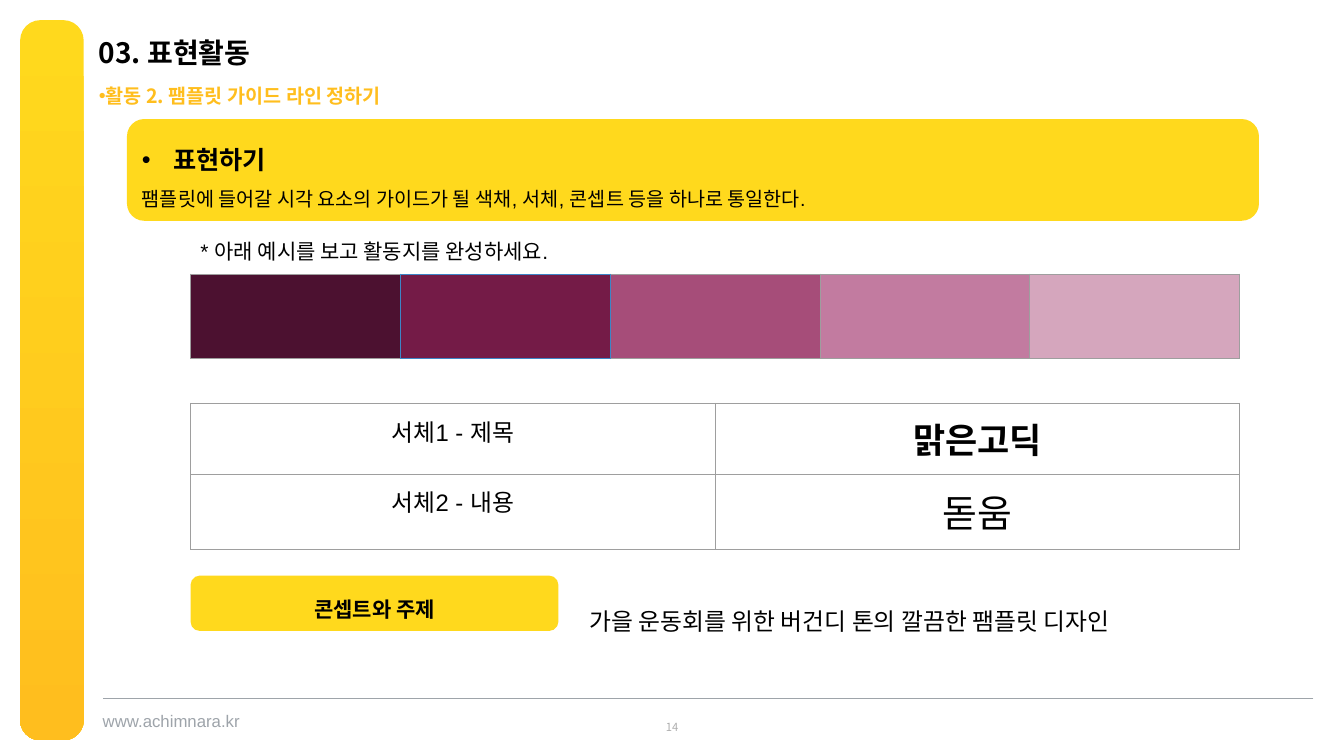
import pptx
import pptx.util
import pptx.dml.color
import pptx.enum.shapes
import pptx.enum.text
from lxml import etree

Pt = pptx.util.Pt
ALIGN = pptx.enum.text.PP_ALIGN
ANCHOR = pptx.enum.text.MSO_ANCHOR
ROUND = pptx.enum.shapes.MSO_SHAPE.ROUNDED_RECTANGLE
NS = "http://schemas.openxmlformats.org/drawingml/2006/main"

# Content
TITLE = "03. 표현활동"
STEP = "활동 2. 팸플릿 가이드 라인 정하기"
HEAD = "표현하기"
BODY = "팸플릿에 들어갈 시각 요소의 가이드가 될 색채, 서체, 콘셉트 등을 하나로 통일한다."
NOTE = "* 아래 예시를 보고 활동지를 완성하세요."
TONES = ["4C1130", "741B47", "A64D79", "C27BA0", "D5A6BD"]
PICKED = 1
FONTS = [("서체1 - 제목", "맑은고딕", 25, True),
         ("서체2 - 내용", "돋움", 27, False)]
LABEL = "콘셉트와 주제"
THEME = "가을 운동회를 위한 버건디 톤의 깔끔한 팸플릿 디자인"
SITE = "www.achimnara.kr"
PAGE = "14"

# Colours, fonts and type sizes
LOOK = dict(sun="FFD91D", amber="FFBE1E", ink="000000", grey="9EA4AA",
            pale="AEAEAE", grid="9E9E9E", blue="3D85C6",
            latin="Arial", hangul="Noto Sans CJK KR",
            title=20, head=18, cell=17, note=15, body=14, site=12, page=8)

# Layout, in points
LEFT, WIDE = 136.1, 749.6
TABLE_TOP, ROWS = 288, (50.6, 53.6)
PAD = (7.2, 3.6)


def rgb(code):
    return pptx.dml.color.RGBColor.from_string(code)


def node(parent, tag, **attrs):
    return etree.SubElement(parent, f"{{{NS}}}{tag}", attrs)


def write(para, text, size, color="ink", face="latin", bold=False,
          align=ALIGN.LEFT, space=None, bullet=None, hang=0):
    para.text = text
    para.alignment = align
    if space:
        para.line_spacing = space
    if bullet:
        props = para._p.get_or_add_pPr()
        props.set("marL", str(Pt(hang)))
        props.set("indent", str(-Pt(hang)))
        node(node(props, "buClr"), "srgbClr", val=LOOK[bullet])
        node(props, "buFont", typeface=LOOK["latin"])
        node(props, "buChar", char="•")
    font = para.font
    font.size, font.bold, font.name = Pt(size), bold, LOOK[face]
    font.color.rgb = rgb(LOOK[color])
    latin = para._p.find(f".//{{{NS}}}latin")
    latin.addnext(latin.makeelement(f"{{{NS}}}ea", typeface=LOOK["hangul"]))


def frame(shape, pad, anchor):
    area = shape.text_frame
    area.word_wrap, area.vertical_anchor = True, anchor
    area.margin_left = area.margin_right = Pt(pad[0])
    area.margin_top = area.margin_bottom = Pt(pad[1])
    return area


def label(slide, box, text, size, pad=(0, 0), anchor=ANCHOR.TOP, **style):
    area = frame(slide.shapes.add_textbox(*map(Pt, box)), pad, anchor)
    write(area.paragraphs[0], text, size, **style)


def panel(slide, box, curve):
    shape = slide.shapes.add_shape(ROUND, *map(Pt, box))
    shape.adjustments[0] = curve
    shape.shadow.inherit = False
    shape.line.fill.background()
    shape.fill.solid()
    shape.fill.fore_color.rgb = rgb(LOOK["sun"])
    return shape


def grid(slide, top, rows, cols):
    table = slide.shapes.add_table(len(rows), cols, Pt(LEFT), Pt(top),
                                   Pt(WIDE), Pt(sum(rows))).table
    table.first_row = table.horz_banding = False
    for row, high in zip(table.rows, rows):
        row.height = Pt(high)
    for col in table.columns:
        col.width = Pt(WIDE / cols)
    return table


def edge(cell, fill=None, **sides):
    props = cell._tc.get_or_add_tcPr()
    for side in "LRTB":
        line = node(props, "ln" + side, w=str(Pt(0.75)))
        color = LOOK[sides.get(side, "grid")]
        node(node(line, "solidFill"), "srgbClr", val=color)
    if fill:
        cell.fill.solid()
        cell.fill.fore_color.rgb = rgb(fill)
    else:
        cell.fill.background()


def main():
    deck = pptx.Presentation()
    deck.slide_width, deck.slide_height = Pt(960), Pt(540)
    slide = deck.slides.add_slide(deck.slide_layouts[6])

    # Side bar and footer
    bar = panel(slide, (14.4, 14.4, 45.4, 514.5), 0.32)
    bar.fill.gradient()
    bar.fill.gradient_angle = 270
    for stop, color, place in zip(bar.fill.gradient_stops, ("sun", "amber"), (0, 1)):
        stop.color.rgb, stop.position = rgb(LOOK[color]), place
    rule = slide.shapes.add_connector(pptx.enum.shapes.MSO_CONNECTOR.STRAIGHT,
                                      Pt(938.2), Pt(499), Pt(73.4), Pt(499))
    rule.line.color.rgb, rule.line.width = rgb(LOOK["grey"]), Pt(0.75)
    node(rule._element.spPr, "effectLst")
    label(slide, (73.4, 507.6, 108, 14.4), SITE, LOOK["site"], color="grey")
    label(slide, (372.2, 513.4, 216, 12.2), PAGE, LOOK["page"], PAD, ANCHOR.MIDDLE,
          color="pale", face="hangul", align=ALIGN.CENTER)

    # Headings
    label(slide, (70.6, 28.1, 566.6, 20.2), TITLE, LOOK["title"],
          face="hangul", bold=True, space=0.9)
    label(slide, (70.6, 56.9, 566.6, 20.2), STEP, LOOK["body"], color="amber",
          face="hangul", bold=True, space=1.2, bullet="amber")

    # Task panel and note
    task = frame(panel(slide, (90.7, 85, 808.6, 72.7), 0.17), PAD, ANCHOR.MIDDLE)
    write(task.paragraphs[0], HEAD, LOOK["head"], bold=True, space=1.5,
          bullet="ink", hang=22.5)
    write(task.add_paragraph(), BODY, LOOK["body"], space=1.5)
    label(slide, (LEFT, 157.7, 462.2, 25.2), NOTE, LOOK["note"], PAD, space=1.5)

    # Colour strip
    strip = grid(slide, 195.8, [60.5], len(TONES))
    for i, tone in enumerate(TONES):
        sides = {}
        if i == PICKED:
            sides = dict.fromkeys("LRTB", "blue")
        elif abs(i - PICKED) == 1:
            sides = {"R" if i < PICKED else "L": "blue"}
        edge(strip.cell(0, i), tone, **sides)

    # Typeface table
    faces = grid(slide, TABLE_TOP, ROWS, 2)
    for r, (use, name, size, bold) in enumerate(FONTS):
        parts = ((use, LOOK["cell"], "latin", False), (name, size, "hangul", bold))
        for c, (text, size, face, bold) in enumerate(parts):
            cell = faces.cell(r, c)
            cell.margin_left = cell.margin_right = Pt(7.2)
            cell.margin_top = cell.margin_bottom = Pt(7.2)
            write(cell.text_frame.paragraphs[0], text, size, face=face,
                  bold=bold, align=ALIGN.CENTER)
            edge(cell)

    # Concept
    tag = frame(panel(slide, (LEFT, 411.1, 262.8, 39.6), 0.17), PAD, ANCHOR.MIDDLE)
    write(tag.paragraphs[0], LABEL, LOOK["note"], bold=True,
          align=ALIGN.CENTER, space=1.5)
    label(slide, (414, 419.8, 462.2, 28.1), THEME, LOOK["cell"], PAD, space=1.5)

    deck.save("out.pptx")


if __name__ == "__main__":
    main()
